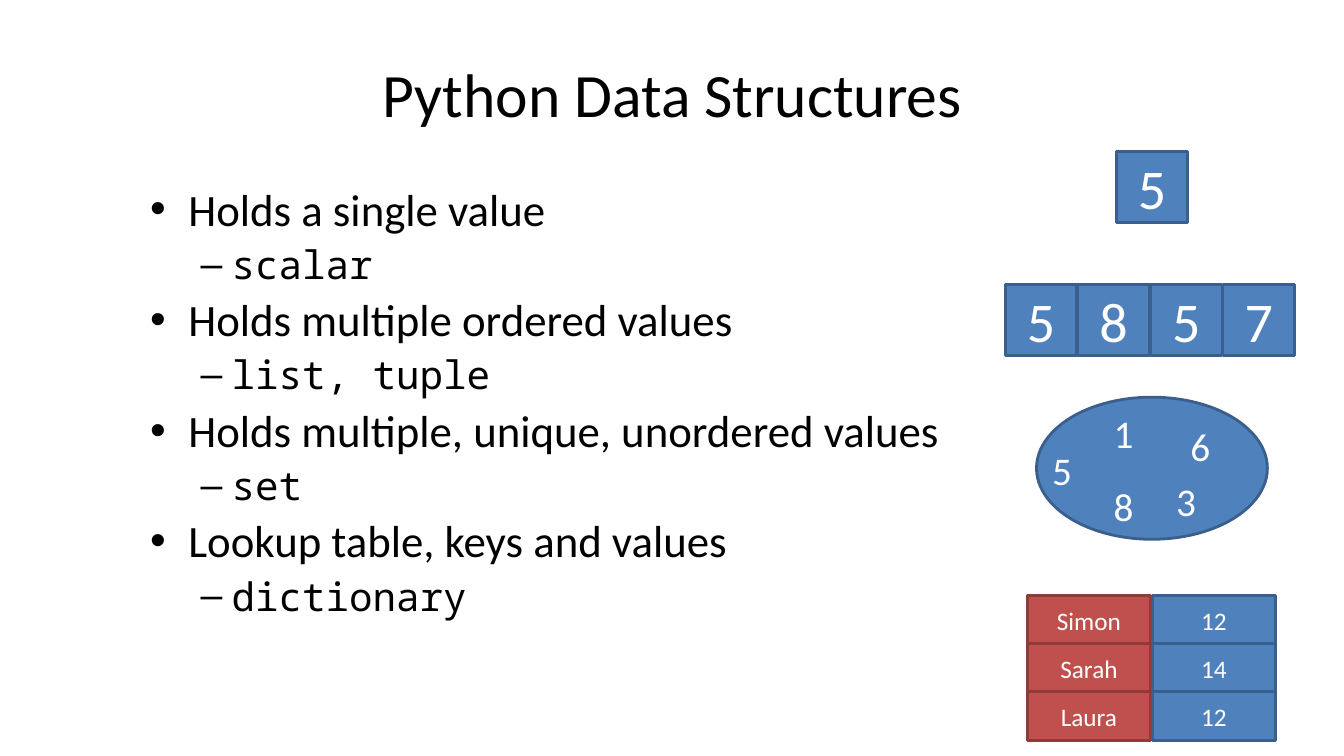
from dataclasses import dataclass

from lxml import etree
from pptx import Presentation
from pptx.dml.color import RGBColor
from pptx.enum.shapes import MSO_SHAPE
from pptx.enum.text import MSO_ANCHOR, PP_ALIGN
from pptx.oxml.ns import qn
from pptx.util import Inches, Pt

RECTANGLE, OVAL = MSO_SHAPE.RECTANGLE, MSO_SHAPE.OVAL
MIDDLE, TOP = MSO_ANCHOR.MIDDLE, MSO_ANCHOR.TOP
CENTER = PP_ALIGN.CENTER


@dataclass(frozen=True)
class Theme:
    font: str = "Calibri"
    code_font: str = "Noto Sans Mono"
    text: RGBColor = RGBColor(0, 0, 0)
    inverse: RGBColor = RGBColor(255, 255, 255)
    blue: RGBColor = RGBColor(0x4F, 0x81, 0xBD)
    blue_edge: RGBColor = RGBColor(0x3A, 0x5F, 0x8C)
    red: RGBColor = RGBColor(0xC0, 0x50, 0x4D)
    red_edge: RGBColor = RGBColor(0x8E, 0x3B, 0x39)
    title_size: int = 44
    body_size: int = 32
    code_size: int = 28
    value_size: int = 40
    member_size: int = 28
    entry_size: int = 18
    edge_width: int = 2
    bullet_spacing: float = 3.5


THEME = Theme()

STRUCTURES = [
    ("Holds a single value", "scalar"),
    ("Holds multiple ordered values", "list, tuple"),
    ("Holds multiple, unique, unordered values", "set"),
    ("Lookup table, keys and values", "dictionary"),
]
LIST_VALUES = ["5", "8", "5", "7"]
SET_MEMBERS = [  # value, left, top, height
    ("5", 10.35, 4.49, 0.35),
    ("1", 10.96, 4.12, 0.35),
    ("8", 10.96, 4.84, 0.35),
    ("3", 11.58, 4.72, 0.5),
    ("6", 11.72, 4.25, 0.35),
]
DICTIONARY = [("Simon", "12"), ("Sarah", "14"), ("Laura", "12")]


def style_font(paragraph, size, color, name=THEME.font):
    paragraph.font.name = name
    paragraph.font.size = Pt(size)
    paragraph.font.color.rgb = color


def add_text_frame(slide, left, top, width, height, anchor):
    box = slide.shapes.add_textbox(
        Inches(left), Inches(top), Inches(width), Inches(height))
    frame = box.text_frame
    frame.word_wrap = True
    frame.vertical_anchor = anchor
    return frame


def set_bullet(paragraph, symbol, margin, hanging):
    properties = paragraph._p.get_or_add_pPr()
    properties.set("marL", str(Inches(margin)))
    properties.set("indent", str(-Inches(hanging)))
    paragraph.space_before = Pt(THEME.bullet_spacing)
    etree.SubElement(properties, qn("a:buFont")).set("typeface", "Arial")
    etree.SubElement(properties, qn("a:buChar")).set("char", symbol)


def add_structure_list(slide):
    frame = add_text_frame(slide, 1.39, 1.75, 8.39, 4.95, TOP)
    paragraph = frame.paragraphs[0]
    for index, (description, names) in enumerate(STRUCTURES):
        if index:
            paragraph = frame.add_paragraph()
        paragraph.text = description
        set_bullet(paragraph, "•", 0.38, 0.38)
        style_font(paragraph, THEME.body_size, THEME.text)

        paragraph = frame.add_paragraph()
        paragraph.text = names
        paragraph.level = 1
        set_bullet(paragraph, "–", 0.81, 0.31)
        style_font(paragraph, THEME.code_size, THEME.text, THEME.code_font)


def add_cell(shapes, left, top, width, height, text="", size=THEME.value_size,
             kind=RECTANGLE, fill=THEME.blue, edge=THEME.blue_edge):
    shape = shapes.add_shape(
        kind, Inches(left), Inches(top), Inches(width), Inches(height))
    shape.shadow.inherit = False
    shape.fill.solid()
    shape.fill.fore_color.rgb = fill
    if edge is None:
        shape.line.fill.background()
    else:
        shape.line.color.rgb = edge
        shape.line.width = Pt(THEME.edge_width)
    if text:
        frame = shape.text_frame
        frame.margin_left = frame.margin_right = 0
        frame.vertical_anchor = MIDDLE
        paragraph = frame.paragraphs[0]
        paragraph.text = text
        paragraph.alignment = CENTER
        style_font(paragraph, size, THEME.inverse)


def add_list_diagram(slide):
    shapes = slide.shapes.add_group_shape().shapes
    for index, value in enumerate(LIST_VALUES):
        add_cell(shapes, 9.97 + 0.72 * index, 2.82, 0.71, 0.71, value)


def add_set_diagram(slide):
    shapes = slide.shapes.add_group_shape().shapes
    add_cell(shapes, 10.28, 3.94, 2.29, 1.41, kind=OVAL)
    for value, left, top, height in SET_MEMBERS:
        add_cell(shapes, left, top, 0.37, height, value,
                 THEME.member_size, edge=None)


def add_dictionary_diagram(slide):
    shapes = slide.shapes.add_group_shape().shapes
    columns = [(10.19, THEME.red, THEME.red_edge),
               (11.43, THEME.blue, THEME.blue_edge)]
    for column, (left, fill, edge) in enumerate(columns):
        for row, entry in enumerate(DICTIONARY):
            add_cell(shapes, left, 5.91 + 0.475 * row, 1.22, 0.49,
                     entry[column], THEME.entry_size, fill=fill, edge=edge)


def main():
    presentation = Presentation()
    presentation.slide_width = Inches(13.33)
    presentation.slide_height = Inches(7.5)
    slide = presentation.slides.add_slide(presentation.slide_layouts[6])

    # Title
    title = add_text_frame(slide, 0.67, 0.3, 12, 1.25, MIDDLE).paragraphs[0]
    title.text = "Python Data Structures"
    title.alignment = CENTER
    style_font(title, THEME.title_size, THEME.text)

    # Descriptions with type names
    add_structure_list(slide)

    # Diagrams, one per structure
    add_cell(slide.shapes, 11.07, 1.5, 0.71, 0.71, "5")
    add_list_diagram(slide)
    add_set_diagram(slide)
    add_dictionary_diagram(slide)

    presentation.save("out.pptx")


if __name__ == "__main__":
    main()
